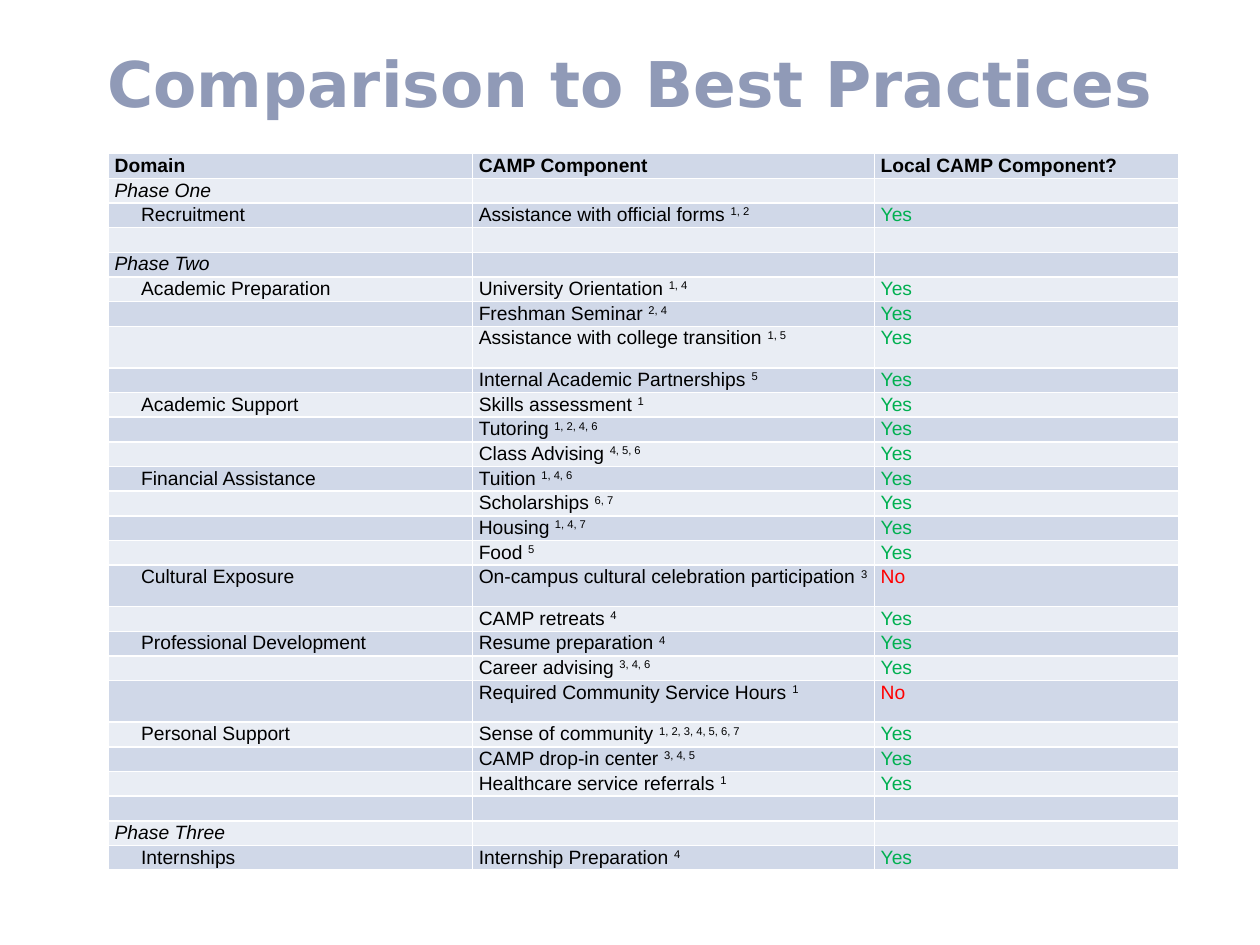
from pptx import Presentation
from pptx.dml.color import RGBColor
from pptx.enum import text as t
from pptx.oxml import parse_xml
from pptx.oxml import ns
from pptx.util import Inches, Pt

TITLE = "Comparison to Best Practices"
HEADERS = ("Domain", "CAMP Component", "Local CAMP Component?")
BLANK = ("", "", "", "")
ROWS = [
    ("Phase One", "", "", ""),
    ("Recruitment", "Assistance with official forms", "1, 2", "Yes"),
    BLANK,
    ("Phase Two", "", "", ""),
    ("Academic Preparation", "University Orientation", "1, 4", "Yes"),
    ("", "Freshman Seminar", "2, 4", "Yes"),
    ("", "Assistance with college transition", "1, 5", "Yes"),
    ("", "Internal Academic Partnerships", "5", "Yes"),
    ("Academic Support", "Skills assessment", "1", "Yes"),
    ("", "Tutoring", "1, 2, 4, 6", "Yes"),
    ("", "Class Advising", "4, 5, 6", "Yes"),
    ("Financial Assistance", "Tuition", "1, 4, 6", "Yes"),
    ("", "Scholarships", "6, 7", "Yes"),
    ("", "Housing", "1, 4, 7", "Yes"),
    ("", "Food", "5", "Yes"),
    ("Cultural Exposure", "On-campus cultural celebration participation", "3", "No"),
    ("", "CAMP retreats", "4", "Yes"),
    ("Professional Development", "Resume preparation", "4", "Yes"),
    ("", "Career advising", "3, 4, 6", "Yes"),
    ("", "Required Community Service Hours", "1", "No"),
    ("Personal Support", "Sense of community", "1, 2, 3, 4, 5, 6, 7", "Yes"),
    ("", "CAMP drop-in center", "3, 4, 5", "Yes"),
    ("", "Healthcare service referrals", "1", "Yes"),
    BLANK,
    ("Phase Three", "", "", ""),
    ("Internships", "Internship Preparation", "4", "Yes"),
]
TALL_ROWS = {7, 16, 20}
COLUMN_WIDTHS = (2.89, 3.19, 2.42)
TABLE_HEIGHT, TALL_HEIGHT = 5.69, 0.33
BANDS = ("D0D8E8", "E9EDF4")
ANSWER_COLORS = {"Yes": "00B050", "No": "FF0000"}
CELL_FORMAT = {"margin_left": Inches(0.05), "margin_right": Inches(0.05),
               "margin_top": Inches(0.01), "margin_bottom": 0,
               "vertical_anchor": t.MSO_ANCHOR.TOP}
PARAGRAPH_FORMAT = {"line_spacing": 1.0, "space_after": Pt(10)}
TITLE_FORMAT = {"word_wrap": True, "vertical_anchor": t.MSO_ANCHOR.MIDDLE}


def color(value):
    return RGBColor.from_string(value)


def apply(target, values):
    for name, value in values.items():
        setattr(target, name, value)


def add_run(paragraph, words, fill="000000", raised=False, **values):
    run = paragraph.add_run()
    run.text = words
    apply(run.font, {"size": Pt(11), "name": "Arial", "bold": False, **values})
    run.font.color.rgb = color(fill)
    if raised:
        run.font._element.set("baseline", "30000")


def add_borders(cell):
    properties = cell._tc.get_or_add_tcPr()
    for index, side in enumerate(("lnL", "lnR", "lnT", "lnB")):
        properties.insert(index, parse_xml(
            f'<a:{side} {ns.nsdecls("a")} w="12700"><a:solidFill>'
            f'<a:srgbClr val="FFFFFF"/></a:solidFill></a:{side}>'))


def prepare_cell(cell, band):
    apply(cell, CELL_FORMAT)
    cell.fill.solid()
    cell.fill.fore_color.rgb = color(band)
    add_borders(cell)
    paragraph = cell.text_frame.paragraphs[0]
    apply(paragraph, PARAGRAPH_FORMAT)
    paragraph._p.get_or_add_endParaRPr().set("sz", "1100")
    return paragraph


def add_title(slide):
    box = slide.shapes.add_textbox(Inches(0.5), Inches(0.03), Inches(9), Inches(1.25))
    apply(box.text_frame, TITLE_FORMAT)
    paragraph = box.text_frame.paragraphs[0]
    paragraph.alignment = t.PP_ALIGN.CENTER
    add_run(paragraph, TITLE, "909AB7", size=Pt(36), name="DejaVu Sans", bold=True)


def add_comparison(slide):
    count = len(ROWS) + 1
    row_height = (TABLE_HEIGHT - TALL_HEIGHT * len(TALL_ROWS)) / (count - len(TALL_ROWS))
    table = slide.shapes.add_table(
        count, len(HEADERS), Inches(0.86), Inches(1.22),
        Inches(sum(COLUMN_WIDTHS)), Inches(TABLE_HEIGHT)).table
    for column, width in zip(table.columns, COLUMN_WIDTHS):
        column.width = Inches(width)
    for index, row in enumerate(table.rows):
        row.height = Inches(TALL_HEIGHT if index in TALL_ROWS else row_height)
        paragraphs = [prepare_cell(cell, BANDS[index % 2]) for cell in row.cells]
        if index == 0:
            for paragraph, header in zip(paragraphs, HEADERS):
                add_run(paragraph, header, bold=True)
            continue
        domain, component, sources, answer = ROWS[index - 1]
        if domain:
            phase = domain.startswith("Phase")
            add_run(paragraphs[0], domain, italic=phase)
            if not phase:
                row.cells[0].margin_left = Inches(0.26)
        if component:
            add_run(paragraphs[1], component + " ")
            add_run(paragraphs[1], sources, raised=True)
            add_run(paragraphs[2], answer, ANSWER_COLORS[answer])


def main():
    presentation = Presentation()
    apply(presentation, {"slide_width": Inches(10), "slide_height": Inches(7.5)})
    slide = presentation.slides.add_slide(presentation.slide_layouts[6])
    add_title(slide)
    add_comparison(slide)
    presentation.save("out.pptx")


if __name__ == "__main__":
    main()
